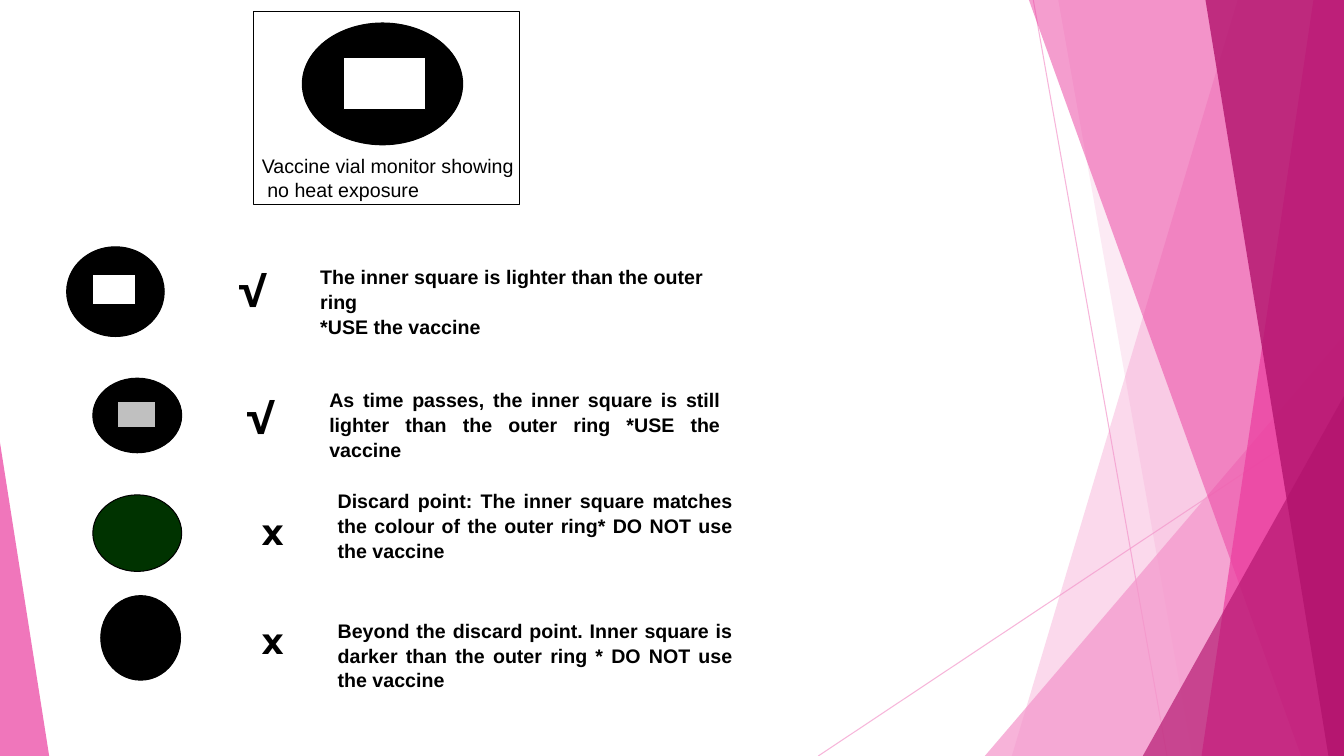
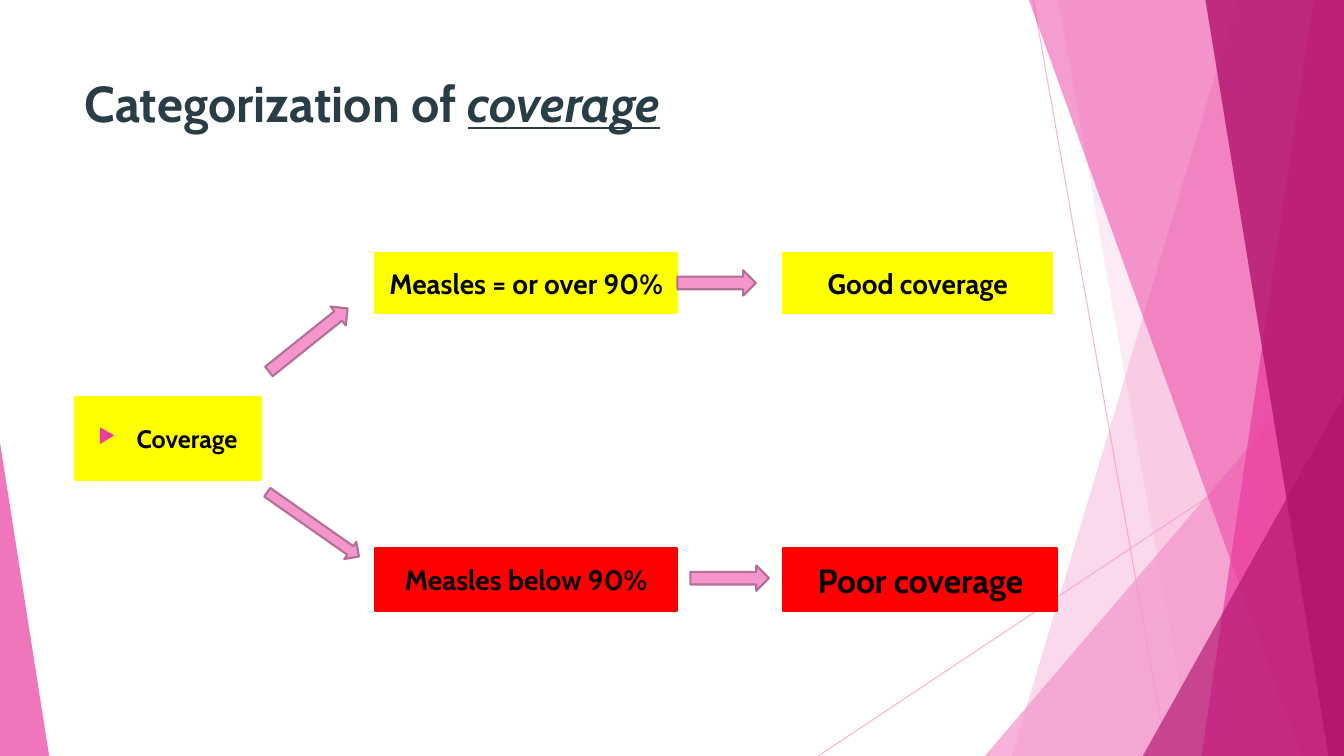
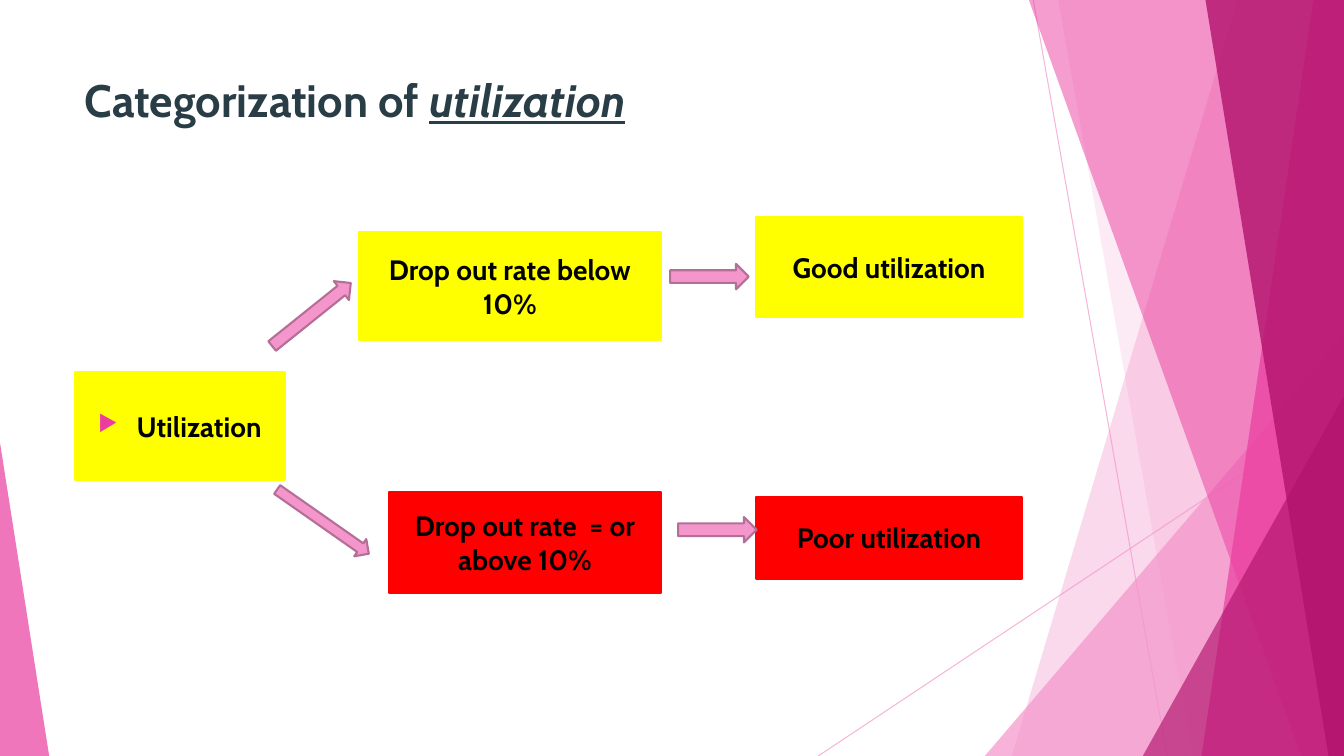
from dataclasses import dataclass

from pptx import Presentation
from pptx.dml.color import RGBColor
from pptx.enum.shapes import MSO_CONNECTOR, MSO_SHAPE
from pptx.enum.text import MSO_ANCHOR, PP_ALIGN
from pptx.oxml.ns import qn
from pptx.util import Cm, Pt

RECT, OVAL = MSO_SHAPE.RECTANGLE, MSO_SHAPE.OVAL
TRIANGLE, ARROW = MSO_SHAPE.ISOSCELES_TRIANGLE, MSO_SHAPE.RIGHT_ARROW
STRAIGHT = MSO_CONNECTOR.STRAIGHT
TOP, MIDDLE = MSO_ANCHOR.TOP, MSO_ANCHOR.MIDDLE
LEFT, CENTER, JUSTIFY = PP_ALIGN.LEFT, PP_ALIGN.CENTER, PP_ALIGN.JUSTIFY


@dataclass(frozen=True)
class Theme:
    # Page size in centimetres
    width: float = 33.87
    height: float = 19.05
    # Colours
    light: str = "F496CB"
    pink: str = "EB3D9F"
    deep: str = "B2136D"
    arrow_edge: str = "B56F96"
    title: str = "293D46"
    ink: str = "000000"
    paper: str = "FFFFFF"
    faded: str = "C0C0C0"
    discard: str = "003300"
    good: str = "FFFF00"
    poor: str = "FF0000"
    # Fonts, type sizes and line widths in points
    heading_font: str = "Cabin"
    body_font: str = "Arial"
    mark_font: str = "Montserrat"
    title_size: float = 36
    node_size: float = 20
    note_size: float = 14
    mark_size: float = 26
    thin: float = 0.75
    thick: float = 1.5


THEME = Theme()


# ---- Basic elements ----
def color(code):
    return RGBColor.from_string(code)


def set_opacity(item, percent):
    for node in item.element.iter(qn("a:srgbClr")):
        alpha = node.makeelement(qn("a:alpha"), {"val": str(percent * 1000)})
        node.append(alpha)


def paint(shape, fill, line=None, weight=THEME.thin, opacity=None):
    shape.shadow.inherit = False
    shape.fill.solid()
    shape.fill.fore_color.rgb = color(fill)
    if line:
        shape.line.color.rgb = color(line)
        shape.line.width = Pt(weight)
    else:
        shape.line.fill.background()
    if opacity:
        set_opacity(shape, opacity)


def add_figure(page, kind, place, fill, rotation=0, **style):
    shape = page.shapes.add_shape(kind, *map(Cm, place))
    shape.rotation = rotation
    paint(shape, fill, **style)
    return shape


def add_bullet(para):
    props = para._p.get_or_add_pPr()
    props.set("marL", str(Cm(0.97)))
    props.set("indent", str(-Cm(0.97)))
    tint = props.makeelement(qn("a:buClr"), {})
    tint.append(tint.makeelement(qn("a:srgbClr"), {"val": THEME.pink}))
    props.append(tint)
    props.append(props.makeelement(qn("a:buSzPct"), {"val": "80000"}))
    props.append(props.makeelement(qn("a:buChar"), {"char": "▶"}))


def write(box, *lines, font=THEME.body_font, size=THEME.note_size, ink=THEME.ink,
          bold=False, align=LEFT, anchor=TOP, bullet=False, spacing=None, accent=None):
    """Write one paragraph a line; accent ends the last one, in underlined italics."""
    frame = box.text_frame
    frame.word_wrap = True
    frame.vertical_anchor = anchor
    for index, line in enumerate(lines):
        para = frame.paragraphs[0] if index == 0 else frame.add_paragraph()
        para.alignment = align
        if spacing:
            para.line_spacing = spacing
        if bullet:
            add_bullet(para)
        para.font.size = Pt(size)
        spans = [para.add_run()]
        spans[0].text = line
        if accent and index == len(lines) - 1:
            spans.append(para.add_run())
            spans[1].text = accent
            spans[1].font.italic = spans[1].font.underline = True
        for span in spans:
            span.font.name = font
            span.font.size = Pt(size)
            span.font.bold = bold
            span.font.color.rgb = color(ink)


def add_text(page, place, *lines, **style):
    write(page.shapes.add_textbox(*map(Cm, place)), *lines, **style)


# ---- Shared backdrop ----
def add_ray(page, *ends):
    ray = page.shapes.add_connector(STRAIGHT, *map(Cm, ends))
    ray.line.color.rgb = color(THEME.light)
    ray.line.width = Pt(THEME.thin)
    set_opacity(ray, 70)
    properties = ray.element.spPr
    properties.append(properties.makeelement(qn("a:effectLst"), {}))


def add_band(page, top_x, bottom_x, fill, opacity):
    """Band from a slanted left edge to the right edge of the page."""
    corners = [(THEME.width, 0), (THEME.width, THEME.height), (bottom_x, THEME.height)]
    builder = page.shapes.build_freeform(Cm(top_x), Cm(0))
    builder.add_line_segments([(Cm(x), Cm(y)) for x, y in corners], close=True)
    paint(builder.convert_to_shape(), fill, opacity=opacity)


def add_wedge(page, left, top, width, apex, fill, opacity):
    """Triangle standing on the bottom edge of the page."""
    place = (left, top, width, THEME.height - top)
    wedge = add_figure(page, TRIANGLE, place, fill, opacity=opacity)
    wedge.adjustments[0] = apex


def add_page(deck):
    page = deck.slides.add_slide(deck.slide_layouts[6])
    add_ray(page, 26.04, 0, 29.41, THEME.height)
    add_ray(page, THEME.width, 10.24, 20.62, THEME.height)
    add_band(page, 31.19, 25.5, THEME.light, 36)
    add_band(page, 26.67, 30.05, THEME.light, 20)
    add_wedge(page, 24.82, 8.46, 9.05, 1, THEME.light, 72)
    add_band(page, 25.93, 32.79, THEME.pink, 50)
    add_band(page, 33.1, 30.28, THEME.pink, 70)
    add_band(page, 30.38, 33.48, THEME.deep, 80)
    add_wedge(page, 28.8, 9.98, 5.07, 1, THEME.deep, 66)
    add_wedge(page, 0, 11.15, 1.24, 0, THEME.pink, 70)
    return page


# ---- Vial monitor page ----
def add_monitor(page, ring, ring_fill=THEME.ink, square=None, square_fill=THEME.paper):
    add_figure(page, OVAL, ring, ring_fill, line=THEME.ink)
    if square:
        add_figure(page, RECT, square, square_fill, line=THEME.ink)


def add_verdict(page, mark, mark_at, note_at, *lines):
    add_text(page, (*mark_at, 1.57, 1.9), mark, font=THEME.mark_font,
             size=THEME.mark_size, bold=True)
    note = add_figure(page, RECT, note_at, THEME.paper)
    write(note, *lines, bold=True, align=JUSTIFY, spacing=1.05)


def build_monitor_page(deck):
    page = add_page(deck)
    # Framed reference
    add_figure(page, RECT, (6.38, 0.3, 6.71, 4.85), THEME.paper, line=THEME.ink)
    add_monitor(page, (7.62, 0.58, 4.04, 3.07), square=(8.66, 1.45, 2.06, 1.32))
    add_text(page, (6.35, 3.76, 8.26, 2.06),
             "Vaccine vial monitor showing", " no heat exposure")
    # Stages of exposure
    add_monitor(page, (1.68, 6.22, 2.46, 2.26), square=(2.34, 6.93, 1.07, 0.74))
    add_monitor(page, (2.34, 9.53, 2.24, 1.88), square=(2.95, 10.13, 0.97, 0.64),
                square_fill=THEME.faded)
    add_monitor(page, (2.34, 12.47, 2.24, 1.93), THEME.discard)
    add_monitor(page, (2.54, 15.01, 2.01, 2.13))
    # Verdicts
    add_verdict(page, "√", (5.72, 6.53), (7.82, 6.53, 10.16, 2.03),
                "The inner square is lighter than the outer ring", "*USE the vaccine")
    add_verdict(page, "√", (5.92, 9.73), (8.05, 9.63, 10.36, 1.47),
                "As time passes, the inner square is still lighter than the outer ring "
                "*USE the vaccine")
    add_verdict(page, "x", (6.35, 12.7), (8.26, 12.17, 10.46, 2.34),
                "Discard point: The inner square matches the colour of the outer ring* "
                "DO NOT use the vaccine")
    add_verdict(page, "x", (6.35, 15.44), (8.26, 15.44, 10.46, 2.24),
                "Beyond the discard point. Inner square is darker than the outer ring * "
                "DO NOT use the vaccine")


# ---- Categorization pages ----
def add_node(page, text, place, fill, size=THEME.node_size, bullet=False):
    node = add_figure(page, RECT, place, fill, line=fill, weight=THEME.thick)
    write(node, text, font=THEME.heading_font, size=size, bold=True,
          align=CENTER, anchor=MIDDLE, bullet=bullet)


def add_arrow(page, corner, size=(1.98, 0.64), rotation=0):
    add_figure(page, ARROW, (*corner, *size), THEME.light, rotation,
               line=THEME.arrow_edge, weight=THEME.thick)


def build_category_page(deck, topic, root, nodes, rising, falling, level,
                        title_size=THEME.title_size):
    page = add_page(deck)
    add_text(page, (1.88, 1.7, 23.88, 2.08), "Categorization of ", accent=topic,
             font=THEME.heading_font, size=title_size, ink=THEME.title, bold=True)
    add_node(page, *root, bullet=True)
    for node in nodes:
        add_node(page, *node)
    add_arrow(page, rising, (2.54, 0.61), 321.3)
    add_arrow(page, falling, (2.82, 0.53), 35)
    for corner in level:
        add_arrow(page, corner)


def main():
    deck = Presentation()
    deck.slide_width, deck.slide_height = Cm(THEME.width), Cm(THEME.height)
    build_monitor_page(deck)
    build_category_page(
        deck, "coverage",
        root=("Coverage", (1.88, 10.01, 4.7, 2.08), THEME.good, 18),
        nodes=[
            ("Measles = or over 90%", (9.45, 6.38, 7.62, 1.5), THEME.good),
            ("Measles below 90%", (9.45, 13.82, 7.62, 1.57), THEME.poor),
            ("Good coverage", (19.74, 6.38, 6.78, 1.5), THEME.good),
            ("Poor coverage", (19.74, 13.82, 6.91, 1.57), THEME.poor, 24),
        ],
        rising=(6.5, 8.26), falling=(6.48, 12.95),
        level=[(17.07, 6.81), (17.4, 14.25)])
    build_category_page(
        deck, "utilization", title_size=32.4,
        root=("Utilization", (1.88, 9.37, 5.31, 2.72), THEME.good),
        nodes=[
            ("Drop out rate below 10%", (9.04, 5.84, 7.62, 2.74), THEME.good),
            ("Drop out rate  = or above 10%", (9.8, 12.4, 6.86, 2.54), THEME.poor),
            ("Good utilization", (19.05, 5.46, 6.71, 2.54), THEME.good),
            ("Poor utilization", (19.05, 12.52, 6.71, 2.06), THEME.poor),
        ],
        rising=(6.58, 7.62), falling=(6.73, 12.88),
        level=[(16.89, 6.65), (17.09, 13.03)])
    deck.save("out.pptx")


if __name__ == "__main__":
    main()
